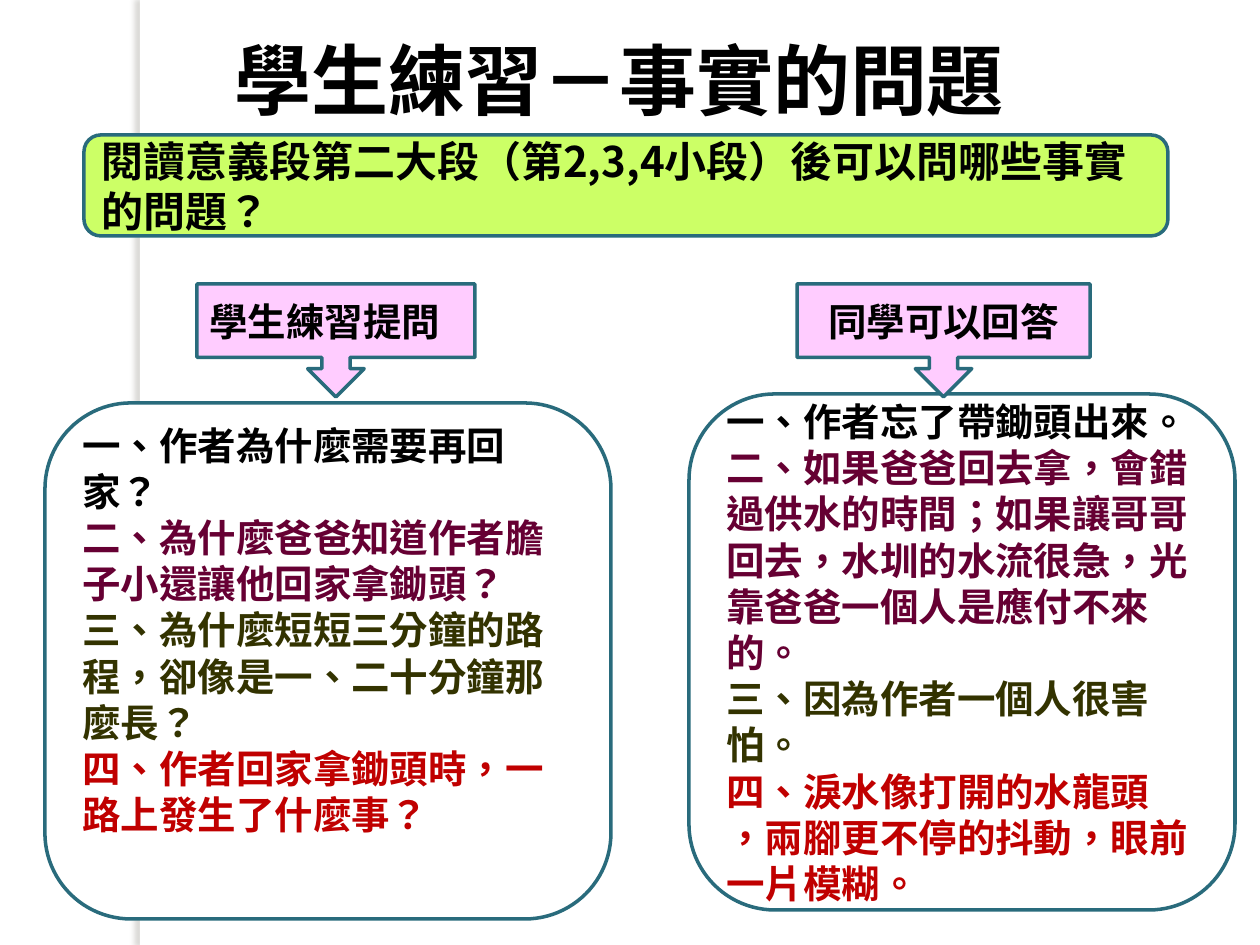
from dataclasses import dataclass

from lxml import etree
from pptx import Presentation
from pptx import util as u
from pptx.dml.color import RGBColor
from pptx.enum import shapes, text
from pptx.oxml import ns


@dataclass(frozen=True)
class Theme:
    font: str = "Noto Sans CJK SC"
    lang: str = "zh-TW"
    ink: str = "000000"
    plum: str = "660033"
    olive: str = "333300"
    red: str = "C00000"
    white: str = "FFFFFF"
    lime: str = "CCFF66"
    pink: str = "FFCCFF"
    teal: str = "296B7C"
    shade: str = "736F63"
    title: int = 44
    lead: int = 24
    body: int = 22
    line: int = 2


THEME = Theme()
SHAPE = shapes.MSO_SHAPE
LEFT, CENTER = text.PP_ALIGN.LEFT, text.PP_ALIGN.CENTER


def px(n):
    return u.Emu(round(n * 914400 / 126))


def rgb(color):
    return RGBColor.from_string(color)


def add_text(p, words, size=THEME.body, color=THEME.ink, align=LEFT):
    p.alignment = align
    p._p.get_or_add_pPr().set("hangingPunct", "0")
    r = p.add_run()
    r.text = words
    r.font.size = u.Pt(size)
    r.font.bold = True
    r.font.name = THEME.font
    r.font.color.rgb = rgb(color)
    r.font._element.set("lang", THEME.lang)
    ea = etree.SubElement(r.font._element, ns.qn("a:ea"))
    ea.set("typeface", THEME.font)


class Deck:
    def __init__(self, theme, width, height):
        self.theme = theme
        self.prs = Presentation()
        self.prs.slide_width, self.prs.slide_height = px(width), px(height)
        self.s = None

    def new_slide(self):
        self.s = self.prs.slides.add_slide(self.prs.slide_layouts[6])

    def shape(self, kind, box, fill):
        sp = self.s.shapes.add_shape(kind, *map(px, box))
        sp.shadow.inherit = False
        sp.fill.solid()
        sp.fill.fore_color.rgb = rgb(fill)
        return sp

    def strip(self, box):
        sp = self.shape(SHAPE.RECTANGLE, box, self.theme.white)
        sp.line.fill.background()
        effects = sp._element.spPr.find(ns.qn("a:effectLst"))
        shadow = etree.SubElement(effects, ns.qn("a:outerShdw"))
        for key, value in (("blurRad", u.Pt(3)), ("dist", u.Pt(3)), ("dir", 180 * 60000)):
            shadow.set(key, str(value))
        color = etree.SubElement(shadow, ns.qn("a:srgbClr"), val=self.theme.shade)
        etree.SubElement(color, ns.qn("a:alpha"), val="25000")

    def title(self, words, box):
        tf = self.s.shapes.add_textbox(*map(px, box)).text_frame
        tf.word_wrap = True
        add_text(tf.paragraphs[0], words, size=self.theme.title, align=CENTER)

    def panel(self, kind, box, fill, lines, bottom=6, **style):
        sp = self.shape(kind, box, fill)
        sp.line.color.rgb = rgb(self.theme.teal)
        sp.line.width = u.Pt(self.theme.line)
        tf = sp.text_frame
        tf.word_wrap = True
        tf.vertical_anchor = text.MSO_ANCHOR.MIDDLE
        tf.margin_bottom = px(bottom)
        for i, (words, color) in enumerate(lines):
            p = tf.add_paragraph() if i else tf.paragraphs[0]
            add_text(p, words, color=color, **style)

    def callout(self, words, box, align=LEFT):
        self.panel(SHAPE.DOWN_ARROW_CALLOUT, box, self.theme.pink,
                   [(words, self.theme.ink)], align=align)

    def card(self, lines, box, bottom=6):
        self.panel(SHAPE.ROUNDED_RECTANGLE, box, self.theme.white, lines, bottom)


def main():
    t = THEME
    deck = Deck(t, 1260, 945)
    deck.new_slide()
    deck.strip((140, 0, 10, 945))
    deck.title("學生練習－事實的問題", (64, 26, 1111, 152))
    deck.panel(SHAPE.ROUNDED_RECTANGLE, (84, 135, 1084, 101), t.lime,
               [("閱讀意義段第二大段（第2,3,4小段）後可以問哪些事實的問題？", t.ink)], size=t.lead)

    questions = [
        ("一、作者為什麼需要再回家？", t.ink),
        ("二、為什麼爸爸知道作者膽子小還讓他回家拿鋤頭？", t.plum),
        ("三、為什麼短短三分鐘的路程，卻像是一、二十分鐘那麼長？", t.olive),
        ("四、作者回家拿鋤頭時，一路上發生了什麼事？", t.red),
    ]
    answers = [
        ("一、作者忘了帶鋤頭出來。", t.ink),
        ("二、如果爸爸回去拿，會錯過供水的時間；如果讓哥哥回去，水圳的水流很急，"
         "光靠爸爸一個人是應付不來的。", t.plum),
        ("三、因為作者一個人很害怕。", t.olive),
        ("四、淚水像打開的水龍頭", t.red),
        ("，兩腳更不停的抖動，眼前一片模糊。", t.red),
    ]
    deck.callout("學生練習提問", (197, 284, 278, 113))
    deck.card(questions, (45, 403, 566, 516), bottom=69)
    deck.card(answers, (689, 394, 546, 516))
    deck.callout("同學可以回答", (797, 284, 293, 113), align=CENTER)
    deck.prs.save("out.pptx")


if __name__ == "__main__":
    main()
